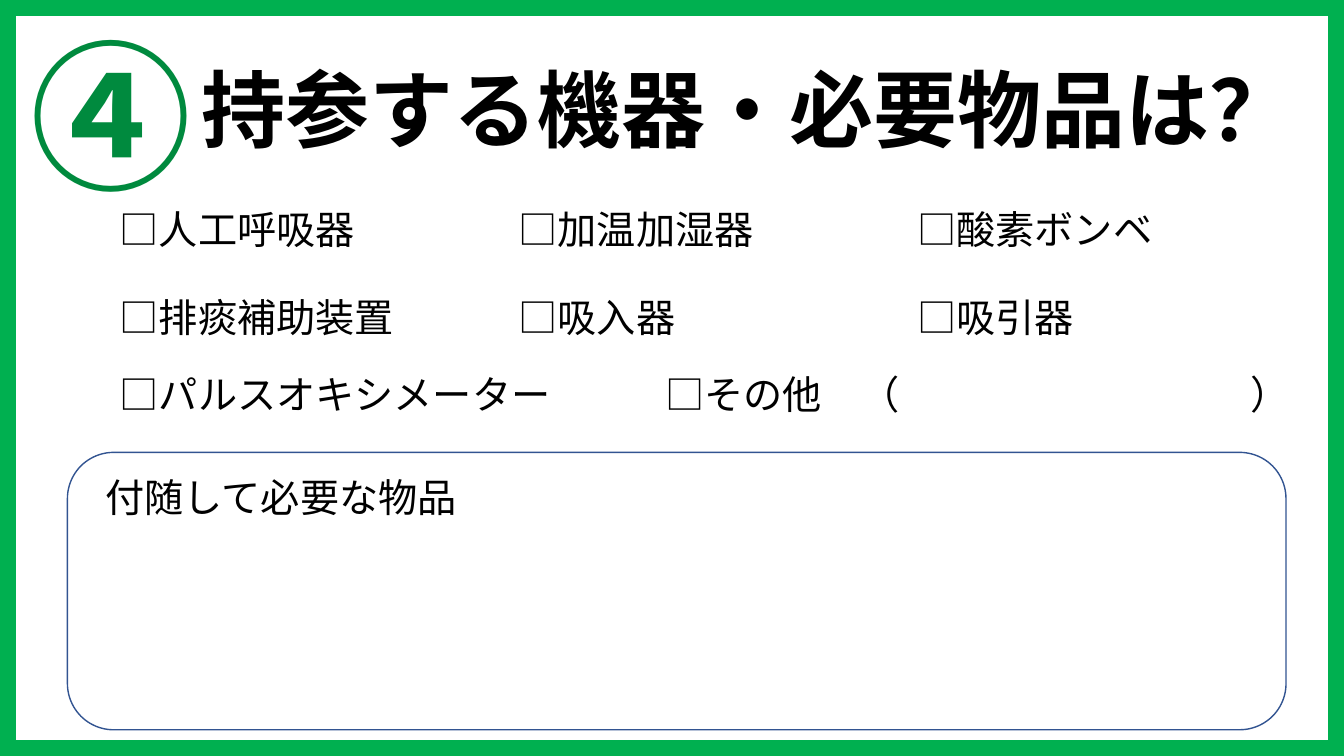
from lxml.etree import SubElement
from pptx import Presentation
from pptx.dml.color import RGBColor
from pptx.enum.shapes import MSO_SHAPE
from pptx.enum.text import MSO_ANCHOR, MSO_AUTO_SIZE, PP_ALIGN
from pptx.oxml.ns import qn
from pptx.util import Cm, Pt

FONT = "Noto Sans CJK JP"
BLACK = "000000"
BADGE_GREEN = "008A3E"
FRAME_GREEN = "00B050"
NOTES_BLUE = "325491"
ITEM_SIZE = 28
ITEM_HEIGHT = 1.45

EQUIPMENT = [
    ["□人工呼吸器", "□加温加湿器", "□酸素ボンベ"],
    ["□排痰補助装置", "□吸入器", "□吸引器"],
]


def color(hex_value):
    return RGBColor.from_string(hex_value)


def apply_format(target, values):
    for name, value in values.items():
        setattr(target, name, value)


def place(part, box):
    sides = ("left", "top", "width", "height")
    apply_format(part, {side: Cm(length) for side, length in zip(sides, box)})


def write(part, text, size, hex_value=BLACK, bold=False, align=PP_ALIGN.LEFT, wrap=True):
    frame = part.text_frame
    apply_format(frame, {
        "text": text,
        "word_wrap": wrap,
        "auto_size": MSO_AUTO_SIZE.NONE,
        "vertical_anchor": MSO_ANCHOR.TOP,
    })
    paragraph = frame.paragraphs[0]
    paragraph.alignment = align
    for run in paragraph.runs:
        apply_format(run.font, {"size": Pt(size), "bold": bold, "name": FONT})
        run.font.color.rgb = color(hex_value)
        SubElement(run.font._element, qn("a:ea"), typeface=FONT)
    return paragraph


def add_text(slide, box, text, size, **style):
    label = slide.shapes.add_textbox(*map(Cm, box))
    return write(label, text, size, **style)


def add_outline(slide, kind, box, line_hex, fill_hex=None):
    outline = slide.shapes.add_shape(kind, *map(Cm, box))
    outline.shadow.inherit = False
    if fill_hex:
        outline.fill.solid()
        outline.fill.fore_color.rgb = color(fill_hex)
    else:
        outline.fill.background()
    outline.line.color.rgb = color(line_hex)
    outline.line.width = Pt(1)
    return outline


def add_border(slide, box):
    border = add_outline(slide, MSO_SHAPE.FRAME, box, FRAME_GREEN, FRAME_GREEN)
    border.adjustments[0] = 0.02


def add_heading(slide, box):
    left, top, width, height = box
    badge_width = 5.82
    add_text(slide, (left, top, badge_width, height), "④", 115,
             hex_value=BADGE_GREEN, bold=True, align=PP_ALIGN.CENTER)
    title = slide.shapes.title
    title_left = 4.93
    place(title, (left + title_left, top + 1.02, width - title_left, 2.82))
    write(title, "持参する機器・必要物品は？", 60, bold=True)


def add_checklist(slide, box):
    left, top, width, height = box
    column_step = 10.05
    row_step = 2.2
    for row, names in enumerate(EQUIPMENT):
        for column, name in enumerate(names):
            item = (left + column * column_step, top + row * row_step, 7.8, ITEM_HEIGHT)
            add_text(slide, item, name, ITEM_SIZE, wrap=False)
    last_top = top + height - ITEM_HEIGHT
    add_text(slide, (left, last_top, 11.48, ITEM_HEIGHT),
             "□パルスオキシメーター", ITEM_SIZE, wrap=False)
    other_left = 13.74
    other = add_text(slide, (left + other_left, last_top, width - other_left, ITEM_HEIGHT),
                     "□その他\t（\t）", ITEM_SIZE)
    tab_stops = SubElement(other._p.get_or_add_pPr(), qn("a:tabLst"))
    for position in (4.92, 14.76):
        SubElement(tab_stops, qn("a:tab"), pos=str(Cm(position)), algn="l")


def add_notes_area(slide, box):
    left, top, _, _ = box
    add_outline(slide, MSO_SHAPE.ROUNDED_RECTANGLE, box, NOTES_BLUE)
    add_text(slide, (left + 0.71, top + 0.41, 10.8, ITEM_HEIGHT),
             "付随して必要な物品", ITEM_SIZE)


def main():
    deck = Presentation()
    width, height = 33.87, 19.05
    apply_format(deck, {"slide_width": Cm(width), "slide_height": Cm(height)})
    slide = deck.slides.add_slide(deck.slide_layouts.get_by_name("Title Only"))
    add_heading(slide, (-0.1, 0.3, 33.07, 5.18))
    add_border(slide, (0, 0, width, height))
    add_checklist(slide, (2.77, 5.06, 30.2, 5.6))
    add_notes_area(slide, (1.7, 11.4, 30.71, 6.99))
    deck.save("out.pptx")


if __name__ == "__main__":
    main()
